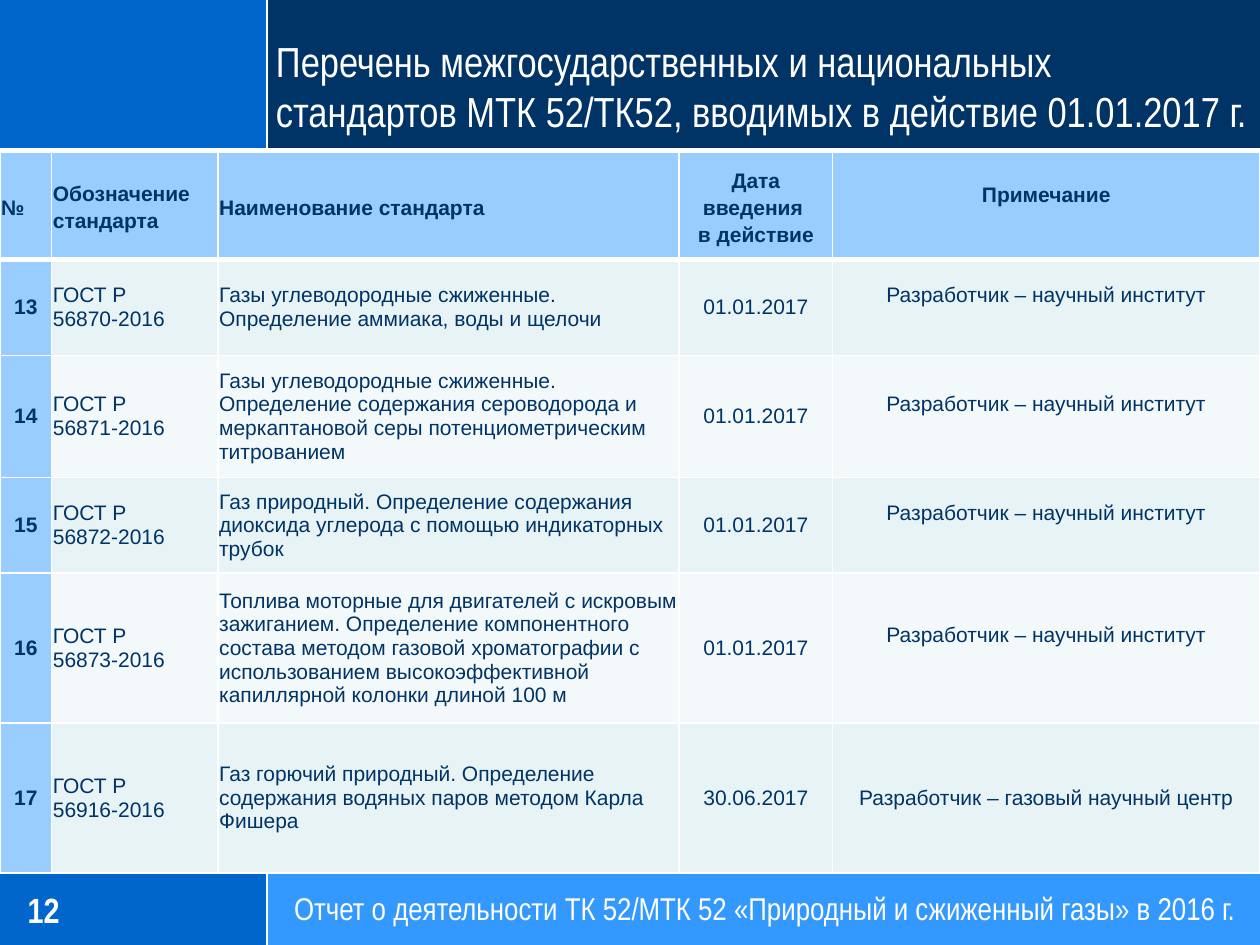
from dataclasses import dataclass

from lxml.etree import SubElement
from pptx import Presentation
from pptx.dml.color import RGBColor
from pptx.enum.shapes import MSO_CONNECTOR, MSO_SHAPE
from pptx.enum.text import MSO_ANCHOR, PP_ALIGN
from pptx.oxml.ns import qn
from pptx.util import Emu, Inches, Pt


@dataclass(frozen=True)
class Theme:
    white: str = "FFFFFF"
    navy: str = "003366"
    blue: str = "0066CC"
    sky: str = "3399FF"
    pale: str = "99CCFF"
    bands: tuple = ("E7F3F4", "F3F9FA")
    body: str = "Arial"
    narrow: str = "Arial Narrow"
    title: int = 24
    number: int = 20
    footer: int = 18
    cell: int = 12
    rule: float = 1.25
    border: int = 1
    heavy: int = 3


class Deck:
    """Builds slides on a grid of 100 columns by 75 rows."""

    def __init__(self, theme):
        self.theme = theme
        self.prs = Presentation()
        self.prs.slide_width, self.prs.slide_height = Inches(10), Inches(7.5)
        self.s = self.prs.slides.add_slide(self.prs.slide_layouts[6])

    def x(self, columns):
        return Emu(round(self.prs.slide_width * columns / 100))

    def y(self, rows):
        return Emu(round(self.prs.slide_height * rows / 75))

    def box(self, left, top, width, height):
        return self.x(left), self.y(top), self.x(width), self.y(height)

    def panel(self, area, color):
        sp = self.s.shapes.add_shape(MSO_SHAPE.RECTANGLE, *self.box(*area))
        sp.shadow.inherit = False
        sp.fill.solid()
        sp.fill.fore_color.rgb = RGBColor.from_string(color)
        sp.line.fill.background()

    def rule(self, x1, y1, x2, y2):
        line = self.s.shapes.add_connector(
            MSO_CONNECTOR.STRAIGHT, self.x(x1), self.y(y1), self.x(x2), self.y(y2))
        line.line.color.rgb = RGBColor.from_string(self.theme.white)
        line.line.width = Pt(self.theme.rule)
        SubElement(line._element.spPr, qn("a:effectLst"))

    def run(self, p, text, size, font, color, bold=False):
        r = p.add_run()
        r.text = text
        r.font.size, r.font.name, r.font.bold = Pt(size), font, bold
        r.font.color.rgb = RGBColor.from_string(color)

    def text(self, area, lines, size, anchor=MSO_ANCHOR.MIDDLE,
             align=PP_ALIGN.LEFT, bold=False):
        tf = self.s.shapes.add_textbox(*self.box(*area)).text_frame
        tf.word_wrap, tf.vertical_anchor = True, anchor
        tf.margin_left = tf.margin_right = tf.margin_top = tf.margin_bottom = 0
        p = tf.paragraphs[0]
        p.alignment = align
        for i, line in enumerate(lines):
            if i:
                p.add_line_break()
            self.run(p, line, size, self.theme.narrow, self.theme.white, bold)

    def borders(self, cell, top, bottom):
        tc_pr = cell._tc.get_or_add_tcPr()
        thin = self.theme.border
        for side, width in zip("LRTB", (thin, thin, top, bottom)):
            ln = SubElement(tc_pr, qn(f"a:ln{side}"), w=str(Pt(width)))
            fill = SubElement(ln, qn("a:solidFill"))
            SubElement(fill, qn("a:srgbClr"), val=self.theme.white)

    def cell(self, cell, lines, fill, align, bold, spacing, lift):
        cell.margin_left = cell.margin_right = self.x(0.1)
        cell.margin_top, cell.margin_bottom = 0, self.y(lift)
        cell.vertical_anchor = MSO_ANCHOR.MIDDLE
        cell.fill.solid()
        cell.fill.fore_color.rgb = RGBColor.from_string(fill)
        tf = cell.text_frame
        for i, line in enumerate(lines.split("\n")):
            p = tf.add_paragraph() if i else tf.paragraphs[0]
            p.alignment, p.line_spacing = align, spacing
            self.run(p, line, self.theme.cell, self.theme.body, self.theme.navy, bold)

    def table(self, top, widths, heights, rows, lifted):
        t = self.theme
        area = self.box(0, top, sum(widths), sum(heights))
        table = self.s.shapes.add_table(len(rows), len(widths), *area).table
        table.first_row = table.horz_banding = False
        for column, width in zip(table.columns, widths):
            column.width = self.x(width)
        for i, (row, height) in enumerate(zip(rows, heights)):
            table.rows[i].height = self.y(height)
            for j, lines in enumerate(row):
                head = i == 0
                centred = j > 2 or (j == 0 and not head)
                cell = table.cell(i, j)
                self.borders(cell, t.heavy if i == 1 else t.border,
                             t.heavy if head else t.border)
                self.cell(cell, lines,
                          t.pale if head or j == 0 else t.bands[(i - 1) % 2],
                          PP_ALIGN.CENTER if centred else PP_ALIGN.LEFT,
                          head or j == 0, 1.15 if head else 1.0,
                          2 if j == 4 and i in lifted else 0)


HEADER = ("№", "Обозначение стандарта", "Наименование стандарта",
          "Дата введения \nв действие", "Примечание")
NEW_YEAR = "01.01.2017"
INSTITUTE = "научный институт"
STANDARDS = (
    ("56870", "Газы углеводородные сжиженные. Определение аммиака, воды и щелочи",
     NEW_YEAR, INSTITUTE),
    ("56871", "Газы углеводородные сжиженные. Определение содержания сероводорода и "
     "меркаптановой серы потенциометрическим титрованием", NEW_YEAR, INSTITUTE),
    ("56872", "Газ природный. Определение содержания диоксида углерода с помощью "
     "индикаторных трубок", NEW_YEAR, INSTITUTE),
    ("56873", "Топлива моторные для двигателей с искровым зажиганием. Определение "
     "компонентного состава методом газовой хроматографии с использованием "
     "высокоэффективной капиллярной колонки длиной 100 м", NEW_YEAR, INSTITUTE),
    ("56916", "Газ горючий природный. Определение содержания водяных паров методом "
     "Карла Фишера", "30.06.2017", "газовый научный центр"),
)


def main():
    theme = Theme()
    deck = Deck(theme)
    split, head, foot = 21.2, 11.8, 69.1
    for top, height, color in ((foot, 75 - foot, theme.sky), (0, head, theme.navy)):
        deck.panel((0, top, split, height), theme.blue)
        deck.panel((split, top, 100 - split, height), color)
        deck.rule(split, top, split, top + height)
    for level in (foot, head):
        deck.rule(0, level, 100, level)

    deck.text((21.9, 2.6, 78.1, 8.2),
              ("Перечень межгосударственных и национальных",
               "стандартов МТК 52/ТК52, вводимых в действие 01.01.2017 г."),
              theme.title, anchor=MSO_ANCHOR.BOTTOM)
    deck.text((2.2, 69.6, 16.3, 5.2), ("12",), theme.number, bold=True)
    deck.text((21.4, foot, 78.6, 75 - foot),
              ("Отчет о деятельности ТК 52/МТК 52 «Природный и сжиженный газы» в 2016 г.",),
              theme.footer, align=PP_ALIGN.CENTER)

    rows = [HEADER] + [
        (str(number), f"ГОСТ Р\n{code}-2016", name, date, f"Разработчик – {author}")
        for number, (code, name, date, author) in enumerate(STANDARDS, 13)]
    deck.table(12.1, (4.1, 13.2, 36.6, 12.2, 33.9),
               (8.5, 7.6, 9.7, 7.6, 11.9, 11.9), rows, lifted=range(5))
    deck.prs.save("out.pptx")


if __name__ == "__main__":
    main()
